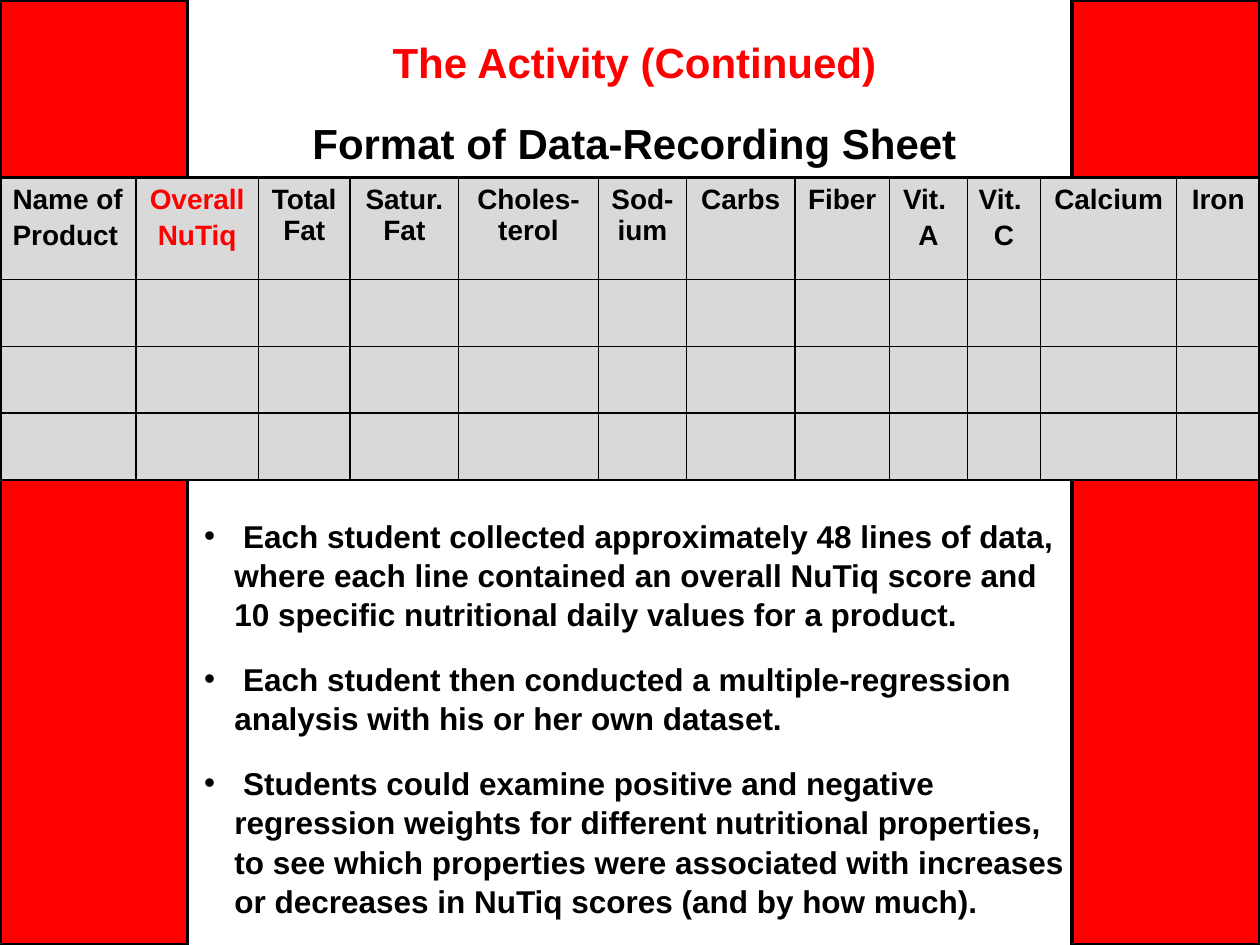
from lxml import etree
from pptx import Presentation
from pptx.dml.color import RGBColor
from pptx.enum.shapes import MSO_SHAPE
from pptx.enum.text import MSO_ANCHOR, MSO_AUTO_SIZE, PP_ALIGN
from pptx.oxml.ns import qn
from pptx.util import Inches, Pt

RECTANGLE = MSO_SHAPE.RECTANGLE
TOP = MSO_ANCHOR.TOP
NO_FIT = MSO_AUTO_SIZE.NONE
LEFT, CENTER = PP_ALIGN.LEFT, PP_ALIGN.CENTER

FONT = "Arial"
COLORS = {"red": "FF0000", "black": "000000", "gray": "D9D9D9", "white": "FFFFFF"}

HEADINGS = [("The Activity (Continued)", "red"),
            ("Format of Data-Recording Sheet", "black")]
COLUMNS = [
    (1.08, ["Name of", "Product"]),
    (0.97, ["Overall", "NuTiq"]),
    (0.73, ["Total Fat"]),
    (0.86, ["Satur. Fat"]),
    (1.11, ["Choles-terol"]),
    (0.70, ["Sod-ium"]),
    (0.86, ["Carbs"]),
    (0.75, ["Fiber"]),
    (0.62, ["Vit. ", "A"]),
    (0.58, ["Vit. ", "C"]),
    (1.08, ["Calcium"]),
    (0.66, ["Iron"]),
]
ROW_HEIGHTS = [0.81, 0.53, 0.53, 0.53]
FINDINGS = [
    " Each student collected approximately 48 lines of data, where each line "
    "contained an overall NuTiq score and 10 specific nutritional daily values "
    "for a product.",
    " Each student then conducted a multiple-regression analysis with his or "
    "her own dataset.",
    " Students could examine positive and negative regression weights for "
    "different nutritional properties, to see which properties were associated "
    "with increases or decreases in NuTiq scores (and by how much).",
]


def rgb(name):
    """Return the palette colour with the given name."""
    return RGBColor.from_string(COLORS[name])


def place(shape, box):
    """Move a shape to a box of left, top, width and height in inches."""
    shape.left, shape.top, shape.width, shape.height = map(Inches, box)


def write_paragraphs(frame, lines, size, align):
    """Fill a text frame with bold (text, colour) lines and return its paragraphs."""
    for index, (text, color) in enumerate(lines):
        paragraph = frame.paragraphs[0] if index == 0 else frame.add_paragraph()
        paragraph.alignment = align
        run = paragraph.add_run()
        run.text = text
        run.font.name = FONT
        run.font.size = Pt(size)
        run.font.bold = True
        run.font.color.rgb = rgb(color)
    return frame.paragraphs


def prepare_frame(placeholder, box):
    """Place a placeholder and return its top-anchored, wrapping text frame."""
    place(placeholder, box)
    frame = placeholder.text_frame
    frame.word_wrap = True
    frame.auto_size = NO_FIT
    frame.vertical_anchor = TOP
    return frame


def add_side_band(slide, box):
    """Add one red outlined band."""
    band = slide.shapes.add_shape(RECTANGLE, *map(Inches, box))
    band.shadow.inherit = False
    band.fill.solid()
    band.fill.fore_color.rgb = rgb("red")
    band.line.color.rgb = rgb("black")
    band.line.width = Pt(2)


def fill_headings(title, box):
    """Write the two centred headings in the title placeholder."""
    frame = prepare_frame(title, box)
    headings = write_paragraphs(frame, HEADINGS, 24, CENTER)
    headings[1].space_before = Pt(17.5)


def fill_findings(body, box):
    """Write the bulleted findings in the body placeholder."""
    frame = prepare_frame(body, box)
    frame.margin_right = Inches(0.05)
    lines = [(text, "black") for text in FINDINGS]
    for paragraph in write_paragraphs(frame, lines, 18, LEFT):
        paragraph.line_spacing = 1.04
        paragraph.space_before = Pt(0)
        paragraph.space_after = Pt(14.5)
        properties = paragraph._p.get_or_add_pPr()
        properties.set("marL", str(Inches(0.24)))
        properties.set("indent", str(-Inches(0.24)))


def set_borders(cell, widths):
    """Draw the left, right, top and bottom cell borders at widths in points."""
    properties = cell._tc.get_or_add_tcPr()
    for index, (side, width) in enumerate(zip("LRTB", widths)):
        border = etree.Element(qn(f"a:ln{side}"), w=str(Pt(width)))
        fill = etree.SubElement(border, qn("a:solidFill"))
        etree.SubElement(fill, qn("a:srgbClr"), val=COLORS["black"])
        properties.insert(index, border)


def add_recording_sheet(slide, box):
    """Add the data-recording table with its header and empty rows."""
    last = len(COLUMNS) - 1
    sheet = slide.shapes.add_table(
        len(ROW_HEIGHTS), len(COLUMNS), *map(Inches, box)).table
    sheet.horz_banding = False
    for row, height in zip(sheet.rows, ROW_HEIGHTS):
        row.height = Inches(height)
    for column, (width, labels) in enumerate(COLUMNS):
        sheet.columns[column].width = Inches(width)
        for row in range(len(ROW_HEIGHTS)):
            cell = sheet.cell(row, column)
            cell.fill.solid()
            cell.fill.fore_color.rgb = rgb("gray")
            set_borders(cell, (2.25 if column == 0 else 1,
                               2.25 if column == last else 1,
                               2.25 if row == 0 else 1, 1))
        header = sheet.cell(0, column)
        header.margin_left = Inches(0.1 if column == 0 else 0.08)
        header.margin_right = Inches(0.08)
        color = "red" if column == 1 else "black"
        paragraphs = write_paragraphs(
            header.text_frame, [(label, color) for label in labels], 16,
            LEFT if column == 0 else CENTER)
        for paragraph in paragraphs[1:]:
            paragraph.space_before = Pt(3.2)


def build_activity_slide(presentation):
    """Add the activity slide with its bands, headings, table and findings."""
    slide = presentation.slides.add_slide(presentation.slide_layouts[1])
    slide.background.fill.solid()
    slide.background.fill.fore_color.rgb = rgb("white")
    for left in (0, 8.51):
        add_side_band(slide, (left, 0, 1.49, 7.5))
    fill_headings(slide.shapes.title, (1.52, 0.24, 7.03, 1.15))
    fill_findings(slide.placeholders[1], (1.52, 4.04, 7.03, 3.37))
    add_recording_sheet(slide, (0, 1.41, 10, sum(ROW_HEIGHTS)))


def main():
    """Build and save the presentation."""
    presentation = Presentation()
    presentation.slide_width = Inches(10)
    presentation.slide_height = Inches(7.5)
    build_activity_slide(presentation)
    presentation.save("out.pptx")


if __name__ == "__main__":
    main()
